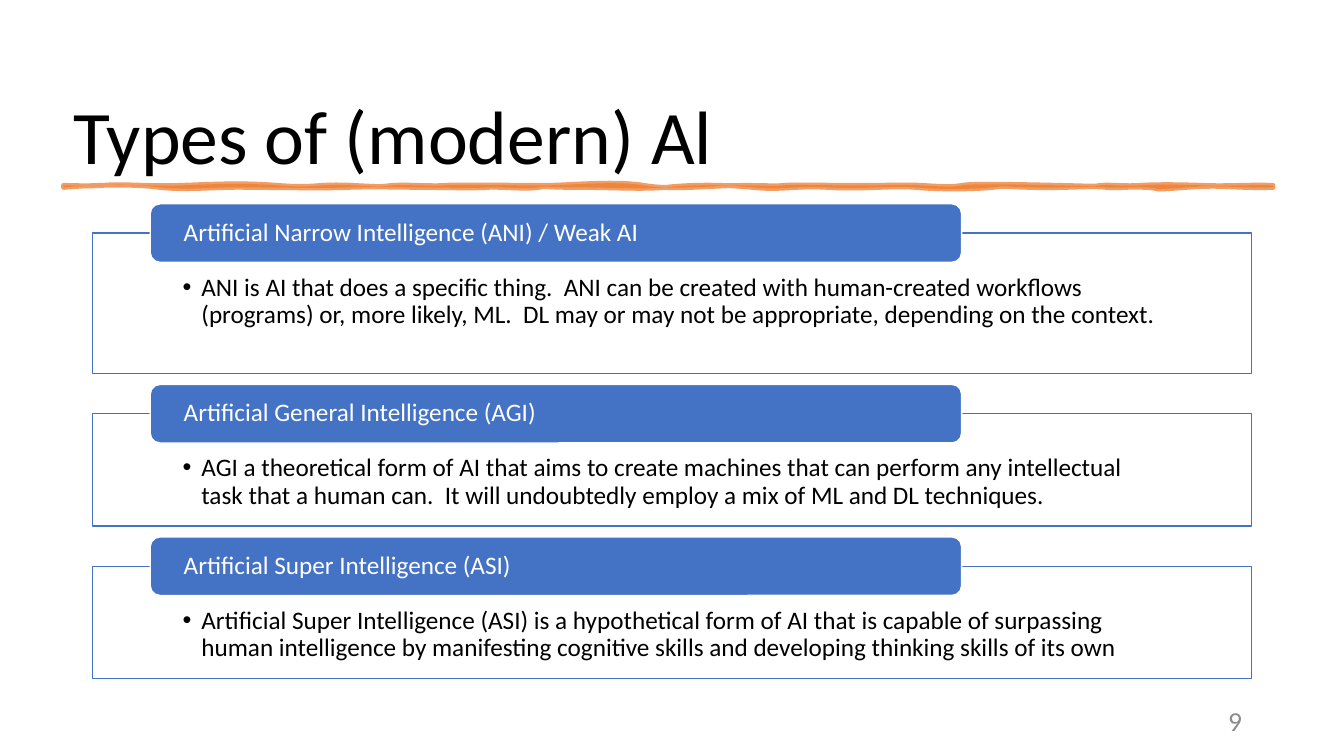
from dataclasses import dataclass

from lxml.etree import SubElement
from pptx import Presentation
from pptx.dml.color import RGBColor
from pptx.enum.shapes import MSO_SHAPE
from pptx.enum.text import MSO_ANCHOR, PP_ALIGN
from pptx.oxml.ns import qn
from pptx.shapes.autoshape import Shape
from pptx.slide import Slide
from pptx.text.text import _Paragraph as Paragraph
from pptx.util import Pt

FONT = "Calibri"
COLORS = {
    "blue": "4472C4",
    "orange": "ED7D31",
    "white": "FFFFFF",
    "black": "000000",
    "gray": "8C8C8C",
}


@dataclass(frozen=True)
class Section:
    heading: str
    body: str
    height: float


SECTIONS = [
    Section(
        "Artificial Narrow Intelligence (ANI) / Weak AI",
        "ANI is AI that does a specific thing.  ANI can be created with human-created "
        "workflows (programs) or, more likely, ML.  DL may or may not be appropriate, "
        "depending on the context.",
        100.45,
    ),
    Section(
        "Artificial General Intelligence (AGI)",
        "AGI a theoretical form of AI that aims to create machines that can perform any "
        "intellectual task that a human can.  It will undoubtedly employ a mix of ML and "
        "DL techniques.",
        80.36,
    ),
    Section(
        "Artificial Super Intelligence (ASI)",
        "Artificial Super Intelligence (ASI) is a hypothetical form of AI that is capable "
        "of surpassing human intelligence by manifesting cognitive skills and developing "
        "thinking skills of its own",
        80.36,
    ),
]
FIRST_TOP, SECTION_GAP = 166.5, 28.57
BOX_LEFT, BOX_WIDTH = 66.2, 828
TAB_LEFT, TAB_WIDTH, TAB_HEIGHT, TAB_RISE = 107.3, 579.6, 41.84, 20.92

# Brush stroke edges: (control x, control y, control x, control y, end x), in steps of 0.72 pt
STEP = 0.72
STROKE_LEFT, STROKE_RIGHT, STROKE_TOP, STROKE_BOTTOM = 63, 1263, 184, 186
TOP_EDGE = [
    (81, 184, 83, 185, 102), (120, 182, 143, 185, 177), (210, 183, 237, 181, 276),
    (314, 187, 313, 182, 351), (388, 186, 375, 185, 390), (404, 183, 430, 185, 441),
    (451, 183, 515, 184, 540), (564, 184, 609, 179, 639), (669, 189, 706, 184, 738),
    (769, 184, 766, 185, 777), (787, 183, 819, 184, 852), (884, 184, 897, 183, 915),
    (933, 185, 943, 186, 954), (964, 182, 1008, 183, 1053), (1097, 185, 1082, 185, 1092),
    (1101, 183, 1117, 185, 1131), (1144, 183, 1168, 183, 1194), (1219, 185, 1241, 183, 1263),
]
BOTTOM_EDGE = [
    (STROKE_RIGHT, 185, STROKE_RIGHT, 185, STROKE_RIGHT),
    (1221, 187, 1216, 183, 1176), (1136, 189, 1156, 187, 1137), (1117, 185, 1113, 187, 1098),
    (1082, 184, 1059, 187, 1023), (986, 185, 1003, 184, 984), (965, 188, 930, 188, 909),
    (887, 184, 856, 188, 822), (787, 184, 777, 189, 747), (717, 183, 686, 183, 660),
    (634, 188, 611, 186, 573), (535, 186, 547, 184, 534), (521, 188, 494, 185, 483),
    (472, 187, 435, 186, 420), (405, 186, 366, 185, 345), (323, 187, 271, 186, 246),
    (220, 185, 186, 189, 159), (131, 182, 85, 184, 63),
]


def color(name: str) -> RGBColor:
    return RGBColor.from_string(COLORS[name])


def set_alpha(shape: Shape, percent: int) -> None:
    """Make every solid colour of the shape partly transparent."""
    for tint in shape._element.spPr.iter(qn("a:srgbClr")):
        SubElement(tint, qn("a:alpha"), val=str(percent * 1000))


def style_shape(shape: Shape, fill: str, line: str, line_width: float) -> None:
    shape.shadow.inherit = False
    shape.fill.solid()
    shape.fill.fore_color.rgb = color(fill)
    shape.line.color.rgb = color(line)
    shape.line.width = Pt(line_width)


def write_text(shape: Shape, text: str, size: float, tint: str, anchor: MSO_ANCHOR,
               insets: tuple[float, float, float, float],
               align: PP_ALIGN = PP_ALIGN.LEFT) -> Paragraph:
    frame = shape.text_frame
    frame.word_wrap = True
    frame.vertical_anchor = anchor
    (frame.margin_left, frame.margin_top,
     frame.margin_right, frame.margin_bottom) = map(Pt, insets)
    paragraph = frame.paragraphs[0]
    paragraph.text = text
    paragraph.alignment = align
    paragraph.font.name = FONT
    paragraph.font.size = Pt(size)
    paragraph.font.color.rgb = color(tint)
    return paragraph


def add_bullet(paragraph: Paragraph, indent: float) -> None:
    properties = paragraph._p.get_or_add_pPr()
    properties.set("marL", str(Pt(indent)))
    properties.set("indent", str(-Pt(indent)))
    SubElement(properties, qn("a:buFont"), typeface="Arial")
    SubElement(properties, qn("a:buChar"), char="•")


def edge_points(curves: list[tuple[int, ...]], rest_y: int) -> list[tuple[int, int]]:
    """List two control points and the end point of each curve, which ends at rest_y."""
    return [(Pt(x * STEP), Pt(y * STEP))
            for x1, y1, x2, y2, end_x in curves
            for x, y in ((x1, y1), (x2, y2), (end_x, rest_y))]


def bend_segments(shape: Shape) -> None:
    """Join each three line segments of a freeform into one Bézier curve."""
    segments = list(shape._element.spPr.iter(qn("a:lnTo")))
    for first, second, third in zip(*[iter(segments)] * 3):
        first.tag = qn("a:cubicBezTo")
        for segment in (second, third):
            first.append(segment[0])
            segment.getparent().remove(segment)


def add_brush_stroke(slide: Slide) -> None:
    builder = slide.shapes.build_freeform(Pt(STROKE_LEFT * STEP), Pt(STROKE_TOP * STEP))
    builder.add_line_segments(edge_points(TOP_EDGE, STROKE_TOP)
                              + edge_points(BOTTOM_EDGE, STROKE_BOTTOM), close=True)
    stroke = builder.convert_to_shape()
    bend_segments(stroke)
    style_shape(stroke, "orange", "orange", 3.5)
    set_alpha(stroke, 75)


def add_section(slide: Slide, section: Section, top: float) -> None:
    box = slide.shapes.add_shape(MSO_SHAPE.RECTANGLE, Pt(BOX_LEFT), Pt(top),
                                 Pt(BOX_WIDTH), Pt(section.height))
    style_shape(box, "white", "blue", 1)
    body = write_text(box, section.body, 18, "black", MSO_ANCHOR.TOP, (64.2, 29.5, 64.2, 10))
    body.line_spacing = 0.9
    add_bullet(body, 13.5)

    tab = slide.shapes.add_shape(MSO_SHAPE.ROUNDED_RECTANGLE, Pt(TAB_LEFT),
                                 Pt(top - TAB_RISE), Pt(TAB_WIDTH), Pt(TAB_HEIGHT))
    style_shape(tab, "blue", "white", 1)
    heading = write_text(tab, section.heading, 18, "white", MSO_ANCHOR.MIDDLE,
                         (21.9, 0, 21.9, 0))
    heading.line_spacing = 0.9


def main() -> None:
    presentation = Presentation()
    presentation.slide_width, presentation.slide_height = Pt(960), Pt(540)
    slide = presentation.slides.add_slide(presentation.slide_layouts[6])

    # Title and brush stroke
    title_box = slide.shapes.add_textbox(Pt(45.4), Pt(18.7), Pt(867.6), Pt(113))
    title = write_text(title_box, "Types of (modern) Al", 54, "black", MSO_ANCHOR.BOTTOM,
                       (7.2, 3.6, 7.2, 3.6))
    title.line_spacing = 1.15
    add_brush_stroke(slide)

    # Stacked sections
    top = FIRST_TOP
    for section in SECTIONS:
        add_section(slide, section, top)
        top += section.height + SECTION_GAP

    # Slide number
    number_box = slide.shapes.add_textbox(Pt(678.2), Pt(500.4), Pt(216), Pt(28.8))
    write_text(number_box, "9", 19.6, "gray", MSO_ANCHOR.MIDDLE, (7.2, 3.6, 7.2, 3.6),
               PP_ALIGN.RIGHT)

    presentation.save("out.pptx")


if __name__ == "__main__":
    main()
